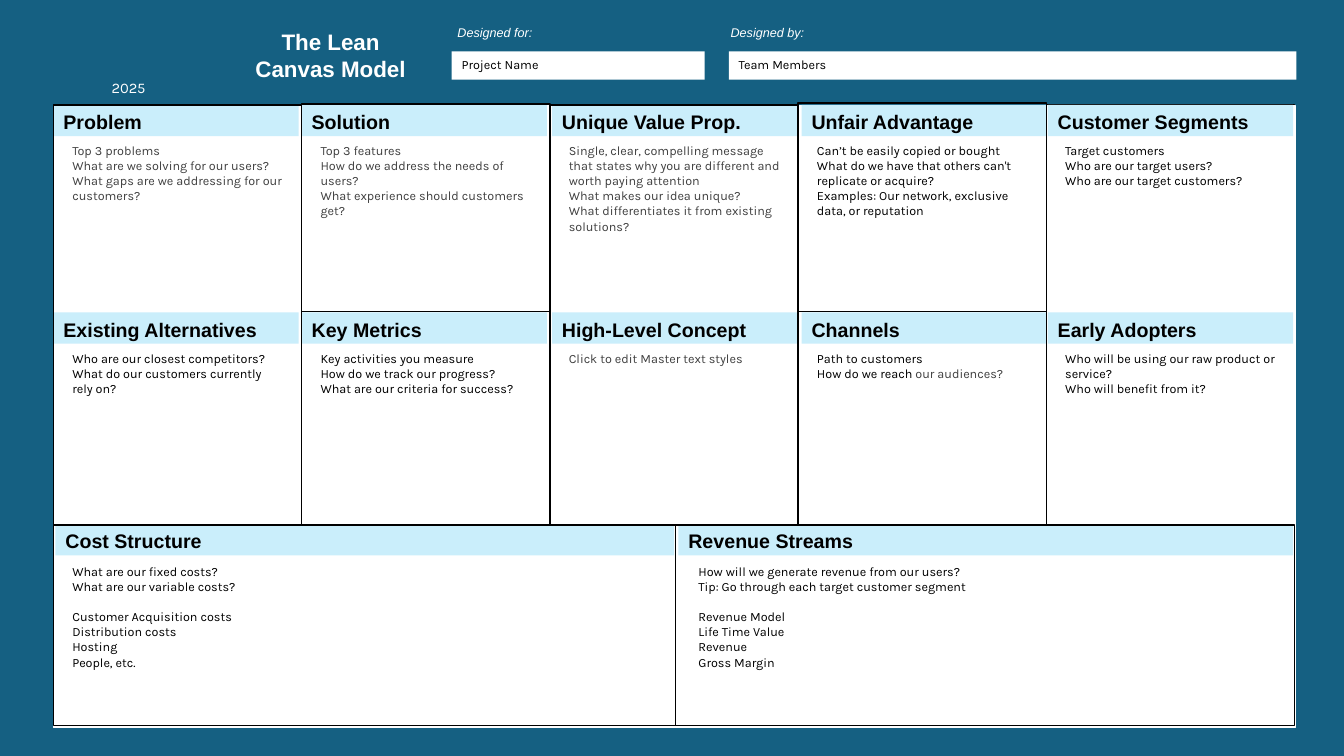
"""Build the Lean Canvas Model slide."""
from pptx import Presentation
from pptx.dml.color import RGBColor
from pptx.enum import shapes, text
from pptx.util import Pt

TEAL = RGBColor(0x15, 0x60, 0x82)
SKY = RGBColor(0xCA, 0xEE, 0xFB)
WHITE = RGBColor(0xFF, 0xFF, 0xFF)
BLACK = RGBColor(0x00, 0x00, 0x00)
GREY = RGBColor(0x40, 0x40, 0x40)

LEFT, PITCH = 38.2, 177.3
BAND_HEIGHT = 22.3
BLANK_LINE = 10.9
HEADING_TOPS = (74.9, 223.2)
HEADING_SHIFTS = (0, 0, 1.5, 2.5, 1)
BODY_TOPS = (98.4, 247)
FRAME_TOPS = (74.9, 74.2, 74.9, 73.6)
SPLIT_COLUMNS = (1, 3)

TOP_CELLS = [
    ("Problem", GREY, ["Top 3 problems", "What are we solving for our users?",
                       "What gaps are we addressing for our customers?"]),
    ("Solution", GREY, ["Top 3 features", "How do we address the needs of users?",
                        "What experience should customers get?"]),
    ("Unique Value Prop.", GREY, [
        "Single, clear, compelling message that states why you are different and worth paying attention",
        "What makes our idea unique?", "What differentiates it from existing solutions?"]),
    ("Unfair Advantage", BLACK, [
        "Can’t be easily copied or bought",
        "What do we have that others can't replicate or acquire?",
        "Examples: Our network, exclusive data, or reputation"]),
    ("Customer Segments", BLACK, ["Target customers", "Who are our target users?",
                                  "Who are our target customers?"]),
]
LOWER_CELLS = [
    ("Existing Alternatives", BLACK, ["Who are our closest competitors?",
                                      "What do our customers currently rely on?"]),
    ("Key Metrics", BLACK, ["Key activities you measure", "How do we track our progress?",
                            "What are our criteria for success?"]),
    ("High-Level Concept", GREY, ["Click to edit Master text styles"]),
    ("Channels", BLACK, ["Path to customers",
                         [("How do we reach ", BLACK), ("our audiences?", GREY)]]),
    ("Early Adopters", BLACK, ["Who will be using our raw product or service?",
                               "Who will benefit from it?"]),
]
FINANCES = [
    ("Cost Structure", (38.2, 444.2), (39.6, 442), (44.6, 429.8),
     ["What are our fixed costs?", "What are our variable costs?",
      "Customer Acquisition costs", "Distribution costs", "Hosting", "People, etc."]),
    ("Revenue Streams", (482.4, 442.1), (484.6, 439.2), (491.8, 427.7),
     ["How will we generate revenue from our users?",
      "Tip: Go through each target customer segment",
      "Revenue Model", "Life Time Value", "Revenue", "Gross Margin"]),
]


def write(frame, paragraphs, size=9, font="Karla", color=BLACK, bold=False, italic=False,
          align=text.PP_ALIGN.LEFT, anchor=text.MSO_ANCHOR.TOP, spacing=None, gap_before=None):
    """Fill a text frame; a paragraph is a string or a list of (text, colour) runs."""
    frame.word_wrap = True
    frame.vertical_anchor = anchor
    for index, content in enumerate(paragraphs):
        paragraph = frame.paragraphs[0] if index == 0 else frame.add_paragraph()
        paragraph.alignment = align
        if spacing:
            paragraph.line_spacing = spacing
        if index == gap_before:
            paragraph.space_before = Pt(BLANK_LINE)
        pieces = [(content, color)] if isinstance(content, str) else content
        for words, tint in pieces:
            run = paragraph.add_run()
            run.text = words
            run.font.name = font
            run.font.size = Pt(size)
            run.font.bold = bold
            run.font.italic = italic
            run.font.color.rgb = tint


def box(slide, left, top, width, height, fill=None, line=None):
    """Add a rectangle with an optional fill and one-point outline."""
    rect = slide.shapes.add_shape(shapes.MSO_SHAPE.RECTANGLE,
                                  Pt(left), Pt(top), Pt(width), Pt(height))
    rect.shadow.inherit = False
    if fill is None:
        rect.fill.background()
    else:
        rect.fill.solid()
        rect.fill.fore_color.rgb = fill
    if line is None:
        rect.line.fill.background()
    else:
        rect.line.color.rgb = line
        rect.line.width = Pt(1)
    return rect.text_frame


def label(slide, left, top, width, height, paragraphs, **style):
    """Add white text straight on the background."""
    caption = slide.shapes.add_textbox(Pt(left), Pt(top), Pt(width), Pt(height))
    write(caption.text_frame, paragraphs, color=WHITE, **style)


def heading(slide, left, top, width, title):
    """Add a pale band with a bold section title."""
    write(box(slide, left, top, width, BAND_HEIGHT, fill=SKY), [title],
          size=14, font="Arial", bold=True)


def draw_header(slide):
    """Add the title, year and the two labelled fields."""
    label(slide, 173.5, 16.6, 125.3, 46.1, ["The Lean", "Canvas Model"], size=16,
          font="Arial", bold=True, align=text.PP_ALIGN.CENTER)
    label(slide, 72.7, 52.6, 46.1, 20.9, ["2025"], size=10.5)
    fields = [("Designed for:", 319.7, "Project Name", 322.6, 180.7),
              ("Designed by:", 514.8, "Team Members", 520.6, 405.4)]
    for prompt, prompt_left, value, left, width in fields:
        label(slide, prompt_left, 14.4, 159, 18, [prompt], font="Arial", italic=True)
        write(box(slide, left, 36.7, width, 20.2, fill=WHITE), [value],
              anchor=text.MSO_ANCHOR.MIDDLE, spacing=0.9)


def draw_frames(slide):
    """Outline the first four columns, two of them split into two rows."""
    for column, top in enumerate(FRAME_TOPS):
        left = LEFT + column * PITCH
        if column in SPLIT_COLUMNS:
            box(slide, left, top, PITCH, 222.5 - top, line=BLACK)
            box(slide, left, 222.5, PITCH, 152, line=BLACK)
        else:
            box(slide, left, top, PITCH, 300, line=BLACK)


def main():
    """Assemble and save the slide."""
    deck = Presentation()
    deck.slide_width, deck.slide_height = Pt(960), Pt(540)
    slide = deck.slides.add_slide(deck.slide_layouts[6])
    slide.background.fill.solid()
    slide.background.fill.fore_color.rgb = TEAL

    box(slide, LEFT + 4 * PITCH, 74.9, PITCH, 300, line=BLACK)
    box(slide, LEFT, 75.6, 887, 444.2, fill=WHITE, line=WHITE)
    rows = list(zip((TOP_CELLS, LOWER_CELLS), HEADING_TOPS, BODY_TOPS))
    for cells, top, _ in rows:
        for column, (title, _, _) in enumerate(cells):
            left = LEFT + column * PITCH + HEADING_SHIFTS[column]
            heading(slide, left, top, 175.2, title)
    for title, _, (left, width), _, _ in FINANCES:
        heading(slide, left, 374.4, width, title)

    draw_frames(slide)
    for _, (left, width), _, _, _ in FINANCES:
        box(slide, left, 375.1, width, 143.3, line=BLACK)
    draw_header(slide)

    for cells, _, top in rows:
        for column, (_, color, prompts) in enumerate(cells):
            body = box(slide, LEFT + 6.4 + column * PITCH, top, 165.6, 120.2, fill=WHITE)
            write(body, prompts, color=color)
    for _, _, _, (left, width), prompts in FINANCES:
        write(box(slide, left, 398.9, width, 113.8, fill=WHITE), prompts, gap_before=2)

    deck.save("out.pptx")


if __name__ == "__main__":
    main()
